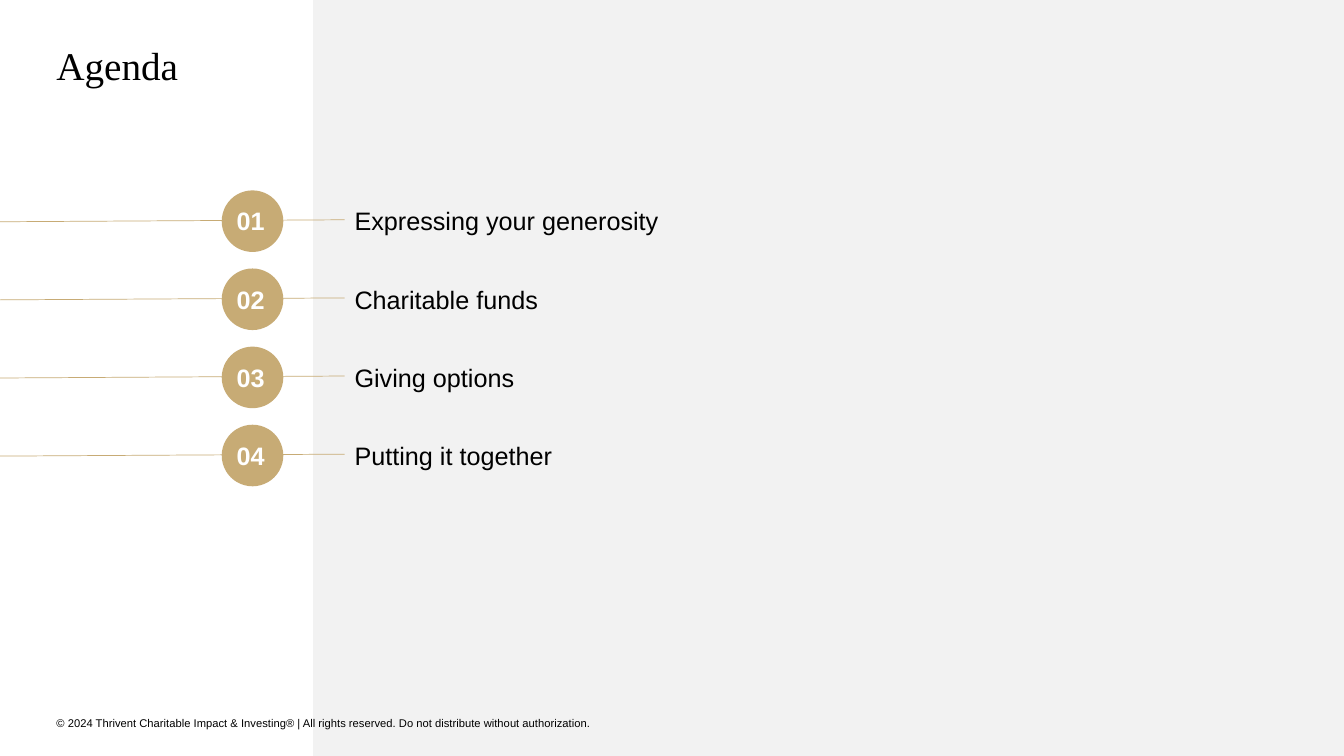
from dataclasses import dataclass

from lxml import etree
from pptx import Presentation
from pptx.dml.color import RGBColor
from pptx.enum import shapes, text
from pptx.oxml import ns
from pptx.util import Pt

HUES = {"gold": "C7AB75", "grey": "F2F2F2", "white": "FFFFFF", "black": "000000"}
PITCH = 55.8  # distance from one agenda row to the next


@dataclass
class Box:
    left: float
    top: float
    width: float
    height: float

    def args(self) -> list[Pt]:
        return [Pt(v) for v in (self.left, self.top, self.width, self.height)]


@dataclass
class Style:
    size: float
    font: str = "Arial"
    hue: str = "black"
    bold: bool = False
    inset: bool = True
    anchor: text.MSO_ANCHOR = text.MSO_ANCHOR.TOP
    space: float = 1.0


@dataclass
class Item:
    num: str
    label: str


ITEMS = [
    Item("01", "Expressing your generosity"),
    Item("02", "Charitable funds"),
    Item("03", "Giving options"),
    Item("04", "Putting it together"),
]
HEAD = Style(28, font="Times New Roman", inset=False, space=0.9)
BADGE = Style(18, hue="white", bold=True)
LABEL = Style(18)
FOOT = Style(8, inset=False, anchor=text.MSO_ANCHOR.MIDDLE)


def tint(name: str) -> RGBColor:
    return RGBColor.from_string(HUES[name])


def add_form(slide, kind: shapes.MSO_SHAPE, box: Box, hue: str) -> None:
    form = slide.shapes.add_shape(kind, *box.args())
    form.shadow.inherit = False
    form.fill.solid()
    form.fill.fore_color.rgb = tint(hue)
    form.line.fill.background()


def add_line(slide, left: float, top: float, right: float, end: float) -> None:
    line = slide.shapes.add_connector(
        shapes.MSO_CONNECTOR.STRAIGHT, Pt(left), Pt(top), Pt(right), Pt(end))
    line.line.color.rgb = tint("gold")
    line.line.width = Pt(0.5)
    etree.SubElement(line._element.spPr, ns.qn("a:effectLst"))


def add_text(slide, box: Box, words: str, style: Style) -> None:
    frame = slide.shapes.add_textbox(*box.args()).text_frame
    frame.word_wrap = True
    frame.vertical_anchor = style.anchor
    if not style.inset:
        frame.margin_left = frame.margin_right = Pt(0)
        frame.margin_top = frame.margin_bottom = Pt(0)
    para = frame.paragraphs[0]
    para.line_spacing = style.space
    run = para.add_run()
    run.text = words
    run.font.size = Pt(style.size)
    run.font.name = style.font
    run.font.bold = style.bold
    run.font.color.rgb = tint(style.hue)


def add_item(slide, item: Item, top: float) -> None:
    add_line(slide, 0, top + 22.4, 246.2, top + 21)
    add_form(slide, shapes.MSO_SHAPE.OVAL, Box(158.4, top, 44, 44), "gold")
    add_text(slide, Box(162, top + 7.4, 58, 29), item.num, BADGE)
    add_text(slide, Box(246.2, top + 7.4, 637, 29), item.label, LABEL)


def main() -> None:
    deck = Presentation()
    deck.slide_width, deck.slide_height = Pt(960), Pt(540)
    slide = deck.slides.add_slide(deck.slide_layouts[6])

    # Panel and title
    add_form(slide, shapes.MSO_SHAPE.RECTANGLE, Box(223.6, 0, 736.4, 540), "grey")
    add_text(slide, Box(40.3, 33.1, 880, 67), "Agenda", HEAD)

    # Agenda rows
    for row, item in enumerate(ITEMS):
        add_item(slide, item, 136 + row * PITCH)

    # Footer
    add_text(slide, Box(40.3, 510.5, 439, 11.5),
             "© 2024 Thrivent Charitable Impact & Investing® | All rights reserved. "
             "Do not distribute without authorization.", FOOT)

    deck.save("out.pptx")


if __name__ == "__main__":
    main()
